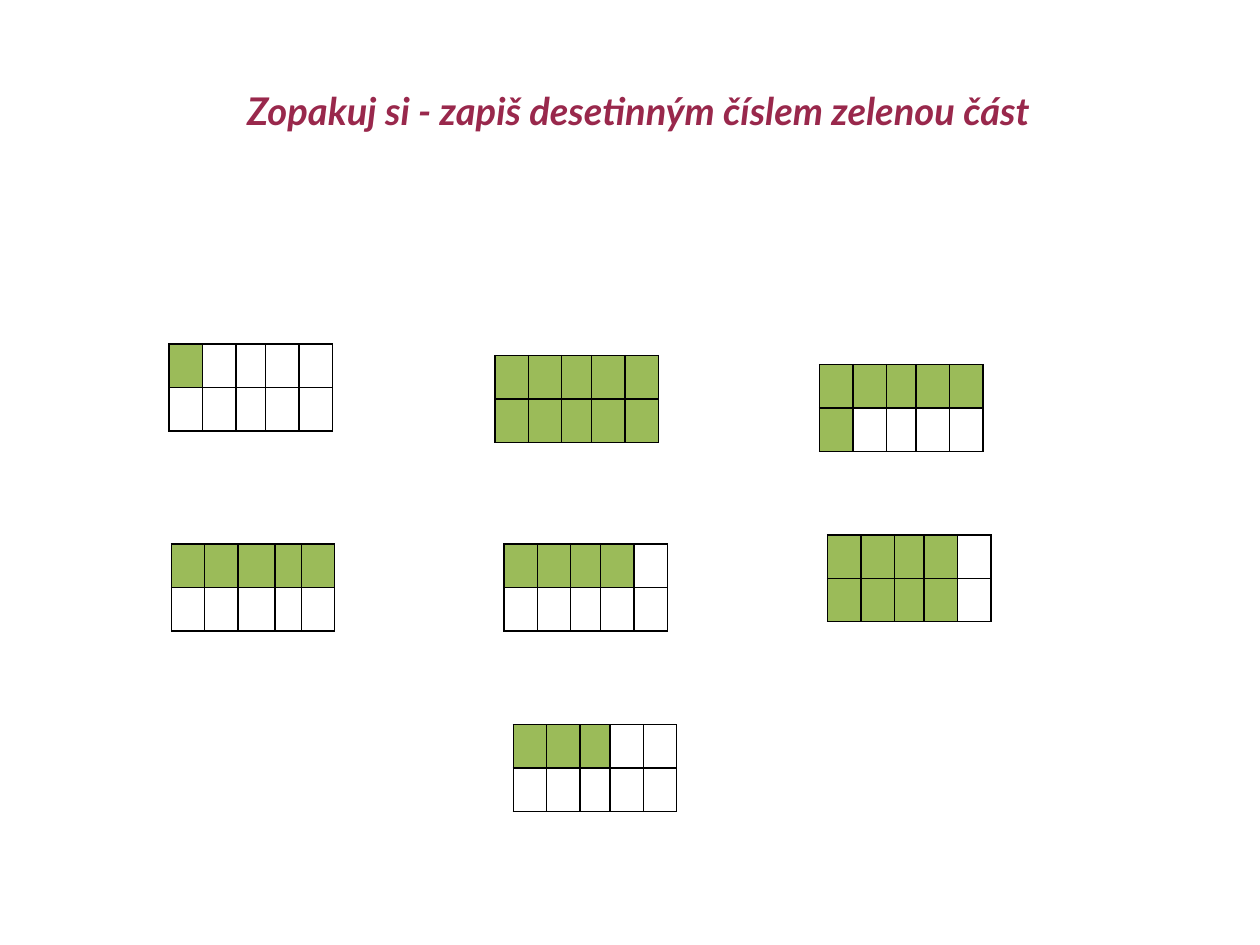
from lxml.etree import SubElement
from pptx import Presentation
from pptx.dml.color import RGBColor
from pptx.enum.text import MSO_ANCHOR, MSO_AUTO_SIZE, PP_ALIGN
from pptx.oxml.ns import qn
from pptx.util import Inches, Pt

GREEN = "9BBB59"
WHITE = "FFFFFF"
BLACK = "000000"
CRIMSON = "99284C"
CM_PER_INCH = 2.54
GRID_WIDTH = 1.43
ROW_HEIGHT = 0.38
COLUMNS = (0.29, 0.29, 0.26, 0.29, 0.29)
UNEVEN_COLUMNS = (0.29, 0.29, 0.32, 0.23, 0.29)

# left, top, green cells in the upper and lower row, column proportions
FRACTIONS = (
    (1.48, 3.01, (1, 0), COLUMNS),
    (1.5, 4.76, (5, 0), UNEVEN_COLUMNS),
    (4.41, 4.76, (4, 0), COLUMNS),
    (7.24, 4.68, (4, 4), COLUMNS),
    (4.33, 3.11, (5, 5), COLUMNS),
    (7.17, 3.19, (5, 1), COLUMNS),
    (4.49, 6.34, (3, 0), COLUMNS),
)


def color(hex_string):
    return RGBColor.from_string(hex_string)


def set_slide_size(presentation, width_cm, height_cm):
    """Set a custom size and drop the preset 4:3 screen type."""
    presentation.slide_width = Inches(width_cm / CM_PER_INCH)
    presentation.slide_height = Inches(height_cm / CM_PER_INCH)
    presentation.element.find(qn("p:sldSz")).attrib.pop("type", None)


def set_title(slide, text):
    title = slide.shapes.title
    title.left, title.top = Inches(0.81), Inches(0.34)
    title.width, title.height = Inches(9.41), Inches(1.24)
    frame = title.text_frame
    frame.word_wrap = True
    frame.auto_size = MSO_AUTO_SIZE.NONE
    frame.vertical_anchor = MSO_ANCHOR.MIDDLE
    frame.margin_left = Inches(0.14)
    frame.margin_right = frame.margin_top = frame.margin_bottom = 0
    paragraph = frame.paragraphs[0]
    paragraph.alignment = PP_ALIGN.CENTER
    run = paragraph.add_run()
    run.text = text
    run.font.name = "Lato"
    run.font.size = Pt(24)
    run.font.bold = run.font.italic = True
    run.font.color.rgb = color(CRIMSON)


def add_borders(cell):
    """Draw all four sides; call before the fill, which must follow the lines."""
    properties = cell._tc.get_or_add_tcPr()
    for side in ("a:lnL", "a:lnR", "a:lnT", "a:lnB"):
        line = SubElement(properties, qn(side), w=str(Pt(1)))
        fill = SubElement(line, qn("a:solidFill"))
        SubElement(fill, qn("a:srgbClr"), val=BLACK)


def add_fraction(slide, left, top, green_counts, proportions):
    """Add a grid of tenths with the first cells of each row in green."""
    table = slide.shapes.add_table(
        len(green_counts), len(proportions), Inches(left), Inches(top),
        Inches(GRID_WIDTH), Inches(ROW_HEIGHT * len(green_counts))).table
    table.first_row = table.horz_banding = False
    for column, proportion in zip(table.columns, proportions):
        column.width = Inches(GRID_WIDTH * proportion / sum(proportions))
    for row, green_count in zip(table.rows, green_counts):
        row.height = Inches(ROW_HEIGHT)
        for index, cell in enumerate(row.cells):
            cell.margin_left = cell.margin_right = 0
            cell.margin_top = cell.margin_bottom = 0
            add_borders(cell)
            cell.fill.solid()
            cell.fill.fore_color.rgb = color(GREEN if index < green_count else WHITE)


def main():
    presentation = Presentation()
    set_slide_size(presentation, 28, 21)
    slide = presentation.slides.add_slide(presentation.slide_layouts[5])
    set_title(slide, "Zopakuj si - zapiš desetinným číslem zelenou část")
    for fraction in FRACTIONS:
        add_fraction(slide, *fraction)
    presentation.save("out.pptx")


if __name__ == "__main__":
    main()
